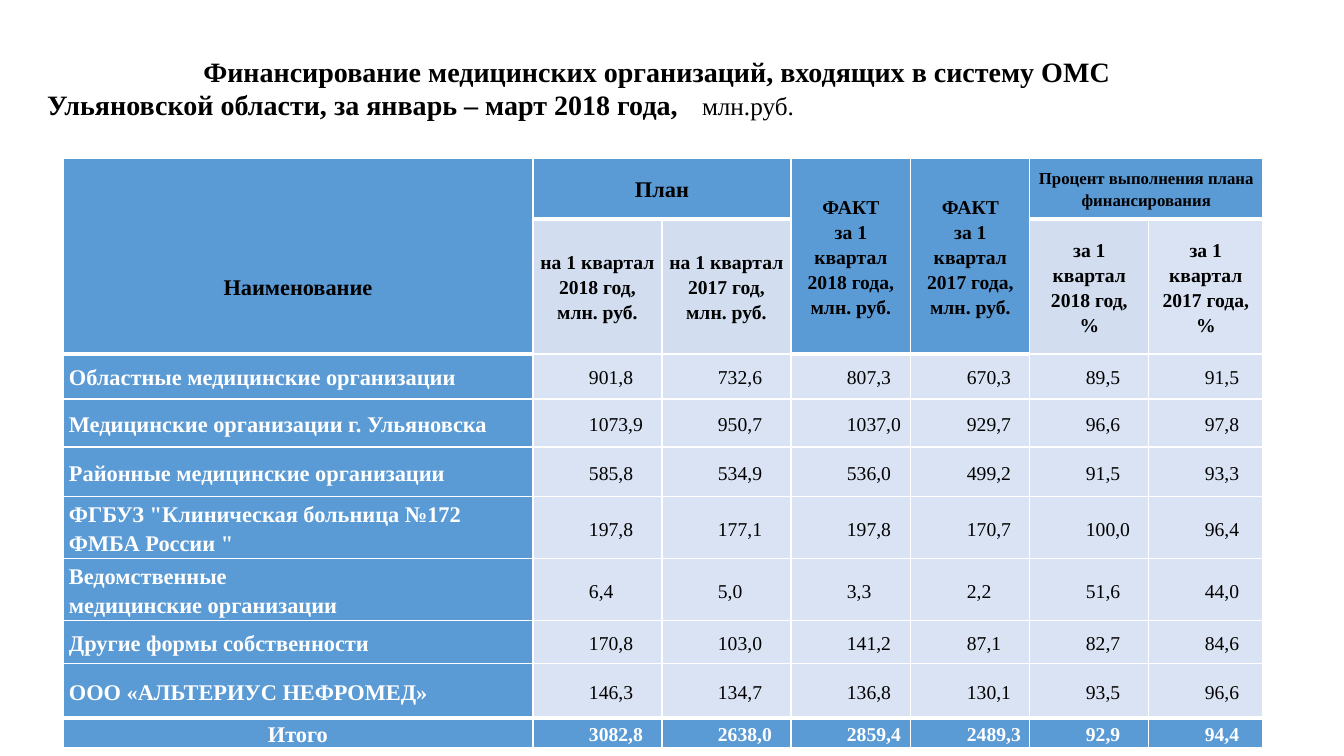
"""Build the slide on quarterly financing of medical organisations."""
from dataclasses import dataclass

from lxml.etree import SubElement
from pptx import Presentation
from pptx.dml.color import RGBColor
from pptx.enum.text import MSO_ANCHOR, MSO_AUTO_SIZE, PP_ALIGN
from pptx.oxml.ns import qn
from pptx.util import Emu, Pt

EMU_PER_PX = 9071


@dataclass(frozen=True)
class Theme:
    font: str = "Times New Roman"
    black: str = "000000"
    white: str = "FFFFFF"
    blue: str = "5B9BD5"
    pale: str = "D2DEEF"
    light: str = "DAE3F3"
    title: int = 20
    unit: int = 18
    label: int = 16
    value: int = 14
    small: int = 12
    thin: int = 1
    thick: int = 3


THEME = Theme()


@dataclass(frozen=True)
class Header:
    row: int
    column: int
    text: str
    fill: str = THEME.blue
    size: int = THEME.value
    rows: int = 1
    columns: int = 1
    top: int = 0


@dataclass(frozen=True)
class Organisation:
    name: str
    values: str
    height: int


COLUMN_WIDTHS = (470, 129, 129, 120, 119, 119, 114)
HEADER_HEIGHTS = (61, 135)
HEADERS = (
    Header(0, 0, "Наименование", size=THEME.label, rows=2, top=60),
    Header(0, 1, "План", size=THEME.label, columns=2),
    Header(0, 3, "ФАКТ\nза 1 квартал 2018 года,\nмлн. руб.", rows=2),
    Header(0, 4, "ФАКТ\nза 1 квартал 2017 года,\nмлн. руб.", rows=2),
    Header(0, 5, "Процент выполнения плана финансирования", size=THEME.small, columns=2),
    Header(1, 1, "на 1 квартал 2018 год,\nмлн. руб.", THEME.pale),
    Header(1, 2, "на 1 квартал 2017 год,\nмлн. руб.", THEME.pale),
    Header(1, 5, "за 1 квартал 2018 год,\n%", THEME.pale),
    Header(1, 6, "за 1 квартал 2017 года,\n%", THEME.light),
)
ORGANISATIONS = (
    Organisation("Областные медицинские организации", "901,8 732,6 807,3 670,3 89,5 91,5", 45),
    Organisation("Медицинские организации г. Ульяновска", "1073,9 950,7 1037,0 929,7 96,6 97,8", 48),
    Organisation("Районные медицинские организации", "585,8 534,9 536,0 499,2 91,5 93,3", 50),
    Organisation('ФГБУЗ "Клиническая больница №172 ФМБА России "', "197,8 177,1 197,8 170,7 100,0 96,4", 62),
    Organisation("Ведомственные\nмедицинские организации", "6,4 5,0 3,3 2,2 51,6 44,0", 62),
    Organisation("Другие формы собственности", "170,8 103,0 141,2 87,1 82,7 84,6", 43),
    Organisation("ООО «АЛЬТЕРИУС НЕФРОМЕД»", "146,3 134,7 136,8 130,1 93,5 96,6", 54),
    Organisation("Итого", "3082,8 2638,0 2859,4 2489,3 92,9 94,4", 30),
)


def px(length: int) -> Emu:
    """Turn pixels into EMU."""
    return Emu(length * EMU_PER_PX)


def write(paragraph, text: str, *, size: int, color: str = THEME.black, bold: bool = True,
          align=PP_ALIGN.LEFT, spacing: float = 1.0, indent: int = 0) -> None:
    """Add a formatted run to a paragraph."""
    paragraph.alignment = align
    paragraph.line_spacing = spacing
    if indent:
        properties = paragraph._p.get_or_add_pPr()
        properties.set("marL", "0")
        properties.set("indent", str(px(indent)))
    run = paragraph.add_run()
    run.text = text
    run.font.name = THEME.font
    run.font.size = Pt(size)
    run.font.bold = bold
    run.font.color.rgb = RGBColor.from_string(color)


def set_borders(cell, top: int = THEME.thin, bottom: int = THEME.thin) -> None:
    """Draw white borders of the given widths around a cell."""
    properties = cell._tc.get_or_add_tcPr()
    for side, width in (("L", THEME.thin), ("R", THEME.thin), ("T", top), ("B", bottom)):
        line = SubElement(properties, qn(f"a:ln{side}"), w=str(Pt(width)))
        SubElement(SubElement(line, qn("a:solidFill")), qn("a:srgbClr"), val=THEME.white)


def fill_cell(cell, text: str, fill: str, *, margin: int = 6, top: int = 0, **text_format) -> None:
    """Colour a cell and write its lines as paragraphs."""
    cell.fill.solid()
    cell.fill.fore_color.rgb = RGBColor.from_string(fill)
    cell.vertical_anchor = MSO_ANCHOR.MIDDLE
    cell.margin_left = cell.margin_right = px(margin)
    cell.margin_top, cell.margin_bottom = px(top), 0
    frame = cell.text_frame
    for index, line in enumerate(text.split("\n")):
        paragraph = frame.add_paragraph() if index else frame.paragraphs[0]
        write(paragraph, line, spacing=1.15, **text_format)


def add_title(slide) -> None:
    """Place the two-line title and its unit."""
    title = slide.shapes.title
    title.left, title.top, title.width, title.height = map(px, (34, 18, 1243, 139))
    frame = title.text_frame
    frame.auto_size = MSO_AUTO_SIZE.NONE
    frame.word_wrap = True
    frame.vertical_anchor = MSO_ANCHOR.TOP
    frame.margin_left, frame.margin_top = px(13), px(36)
    write(frame.paragraphs[0], "Финансирование медицинских организаций, входящих в систему ОМС",
          size=THEME.title, align=PP_ALIGN.CENTER)
    second_line = frame.add_paragraph()
    write(second_line, "Ульяновской области, за январь – март 2018 года,", size=THEME.title)
    write(second_line, "\tмлн.руб.", size=THEME.unit, bold=False)
    tabs = SubElement(second_line._p.get_or_add_pPr(), qn("a:tabLst"))
    SubElement(tabs, qn("a:tab"), pos=str(px(655)), algn="l")


def add_financing_table(slide) -> None:
    """Add the table with its merged headers and its total row."""
    heights = HEADER_HEIGHTS + tuple(item.height for item in ORGANISATIONS)
    table = slide.shapes.add_table(len(heights), len(COLUMN_WIDTHS), px(63), px(158),
                                   px(sum(COLUMN_WIDTHS)), px(sum(heights))).table
    table.first_row = table.horz_banding = False
    for column, width in zip(table.columns, COLUMN_WIDTHS):
        column.width = px(width)
    for row, height in zip(table.rows, heights):
        row.height = px(height)

    total_row = len(heights) - 1
    tall_columns = {header.column for header in HEADERS if header.rows > 1}
    for row_index, row in enumerate(table.rows):
        for column_index, cell in enumerate(row.cells):
            under_header = row_index == 0 or (row_index == 1 and column_index in tall_columns)
            set_borders(cell, top=THEME.thick if row_index == total_row else THEME.thin,
                        bottom=THEME.thick if under_header else THEME.thin)

    for header in HEADERS:
        cell = table.cell(header.row, header.column)
        if header.rows > 1 or header.columns > 1:
            cell.merge(table.cell(header.row + header.rows - 1, header.column + header.columns - 1))
        fill_cell(cell, header.text, header.fill, top=header.top, size=header.size, align=PP_ALIGN.CENTER)

    for row_index, item in enumerate(ORGANISATIONS, len(HEADER_HEIGHTS)):
        is_total = row_index == total_row
        fill_cell(table.cell(row_index, 0), item.name, THEME.blue, size=THEME.label, color=THEME.white,
                  align=PP_ALIGN.CENTER if is_total else PP_ALIGN.LEFT)
        for column_index, value in enumerate(item.values.split(), 1):
            fill_cell(table.cell(row_index, column_index), value, THEME.blue if is_total else THEME.light,
                      margin=7, size=THEME.value, color=THEME.white if is_total else THEME.black,
                      bold=is_total, indent=49)


def main() -> None:
    """Create the presentation and save it."""
    presentation = Presentation()
    presentation.slide_width, presentation.slide_height = px(1344), px(756)
    slide = presentation.slides.add_slide(presentation.slide_layouts[5])
    add_title(slide)
    add_financing_table(slide)
    presentation.save("out.pptx")


if __name__ == "__main__":
    main()
